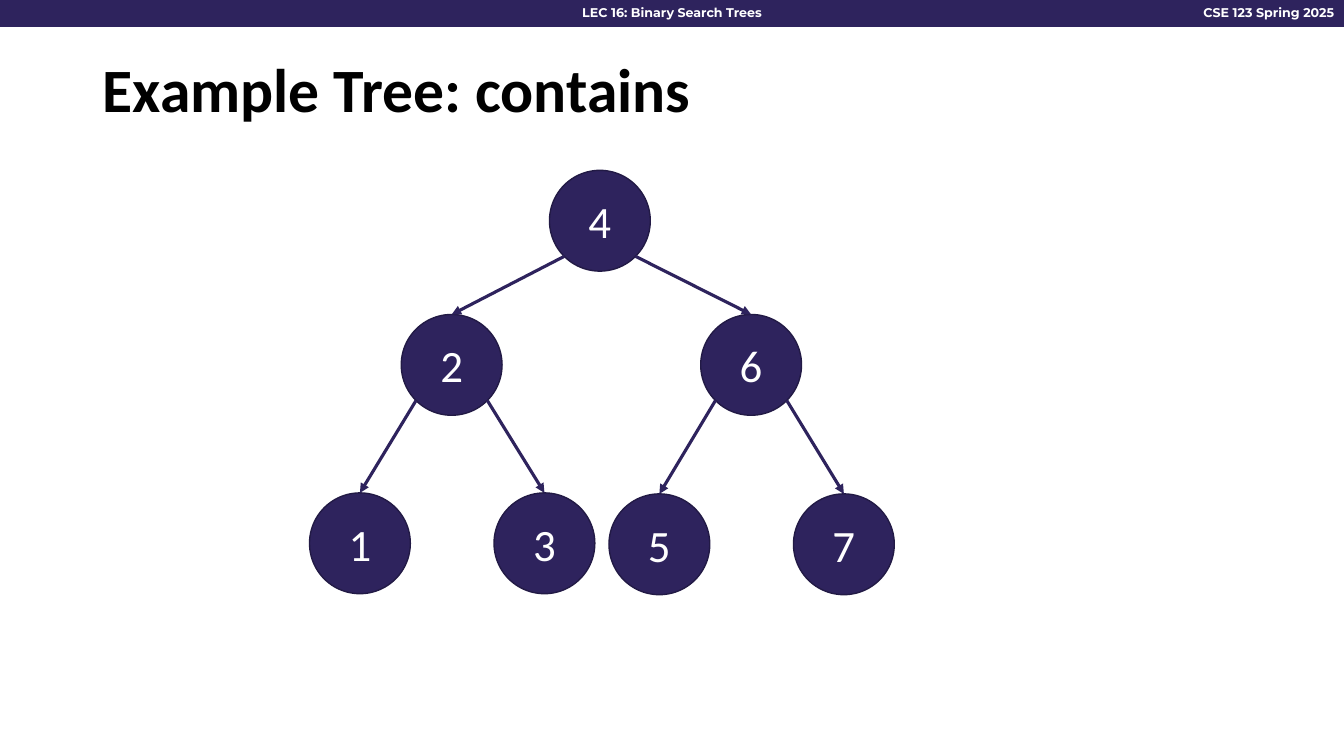
"""Build a lecture slide showing a binary search tree."""
import math
from dataclasses import dataclass

import pptx
import pptx.dml.color
import pptx.enum.shapes
import pptx.enum.text
import pptx.oxml
import pptx.oxml.ns
import pptx.util

Inches = pptx.util.Inches
Pt = pptx.util.Pt
ALIGN = pptx.enum.text.PP_ALIGN
ANCHOR = pptx.enum.text.MSO_ANCHOR
SHAPE = pptx.enum.shapes.MSO_SHAPE

PURPLE = "2E235D"
DARK_PURPLE = "221A45"
WHITE = "FFFFFF"
BLACK = "000000"
NODE_SIZE = 1.0
DIAGONAL = NODE_SIZE / 2 * math.sqrt(0.5)


@dataclass(frozen=True)
class TreeNode:
    value: int
    left: float
    top: float
    parent: int | None = None


@dataclass(frozen=True)
class HeaderLabel:
    text: str
    left: float
    width: float
    alignment: ALIGN


TREE_NODES = [
    TreeNode(4, 5.45, 1.69),
    TreeNode(2, 3.98, 3.12, 4),
    TreeNode(6, 6.95, 3.12, 4),
    TreeNode(1, 3.07, 4.89, 2),
    TreeNode(3, 4.9, 4.89, 2),
    TreeNode(5, 6.04, 4.9, 6),
    TreeNode(7, 7.87, 4.9, 6),
]

HEADER_LABELS = [
    HeaderLabel("CSE 123 Spring 2025", 11.56, 1.77, ALIGN.RIGHT),
    HeaderLabel("LEC 16: Binary Search Trees", 3.28, 6.77, ALIGN.CENTER),
]


def rgb(hex_colour: str) -> pptx.dml.color.RGBColor:
    return pptx.dml.color.RGBColor.from_string(hex_colour)


def write_text(shape, text: str, font_name: str, size: float, colour: str,
               alignment: ALIGN, bold: bool = False):
    paragraph = shape.text_frame.paragraphs[0]
    paragraph.text = text
    paragraph.alignment = alignment
    paragraph.font.name = font_name
    paragraph.font.size = Pt(size)
    paragraph.font.bold = bold
    paragraph.font.color.rgb = rgb(colour)
    return paragraph


def add_filled_shape(slide, kind: SHAPE, left: float, top: float, width: float,
                     height: float, line_colour: str):
    shape = slide.shapes.add_shape(
        kind, Inches(left), Inches(top), Inches(width), Inches(height))
    shape.shadow.inherit = False
    shape.fill.solid()
    shape.fill.fore_color.rgb = rgb(PURPLE)
    shape.line.color.rgb = rgb(line_colour)
    shape.line.width = Pt(1)
    return shape


def add_header_label(slide, label: HeaderLabel) -> None:
    box = slide.shapes.add_textbox(
        Inches(label.left), 0, Inches(label.width), Inches(0.25))
    box.text_frame.word_wrap = True
    write_text(box, label.text, "Montserrat", 9, WHITE, label.alignment, bold=True)


def format_title(title) -> None:
    title.left, title.top = Inches(0.92), Inches(0.5)
    title.width, title.height = Inches(11.5), Inches(0.83)
    title.text_frame.vertical_anchor = ANCHOR.MIDDLE
    paragraph = write_text(title, "Example Tree: contains", "Calibri", 44, BLACK,
                           ALIGN.LEFT, bold=True)
    paragraph.line_spacing = 0.9


def add_node(slide, node: TreeNode):
    circle = add_filled_shape(slide, SHAPE.OVAL, node.left, node.top,
                              NODE_SIZE, NODE_SIZE, DARK_PURPLE)
    circle.text_frame.vertical_anchor = ANCHOR.MIDDLE
    write_text(circle, str(node.value), "Calibri", 32, WHITE, ALIGN.CENTER)
    return circle


def add_branch(slide, parent: TreeNode, child: TreeNode, child_circle) -> None:
    radius = NODE_SIZE / 2
    side = -1 if child.left < parent.left else 1
    connector = slide.shapes.add_connector(
        pptx.enum.shapes.MSO_CONNECTOR.STRAIGHT,
        Inches(parent.left + radius + side * DIAGONAL),
        Inches(parent.top + radius + DIAGONAL),
        Inches(child.left + radius), Inches(child.top))
    connector.end_connect(child_circle, 0)
    connector.line.color.rgb = rgb(PURPLE)
    connector.line.width = Pt(2.25)
    namespace = pptx.oxml.ns.nsdecls("a")
    properties = connector.element.spPr
    properties.find(pptx.oxml.ns.qn("a:ln")).append(
        pptx.oxml.parse_xml(f'<a:tailEnd {namespace} type="triangle"/>'))
    properties.append(pptx.oxml.parse_xml(f"<a:effectLst {namespace}/>"))


def main() -> None:
    presentation = pptx.Presentation()
    presentation.slide_width = Inches(13.33)
    presentation.slide_height = Inches(7.5)
    slide = presentation.slides.add_slide(presentation.slide_layouts[5])
    slide.background.fill.solid()
    slide.background.fill.fore_color.rgb = rgb(WHITE)

    add_filled_shape(slide, SHAPE.RECTANGLE, -0.1, 0, 13.67, 0.26, PURPLE)
    for label in HEADER_LABELS:
        add_header_label(slide, label)
    format_title(slide.shapes.title)

    circles = {node.value: add_node(slide, node) for node in TREE_NODES}
    nodes = {node.value: node for node in TREE_NODES}
    for node in TREE_NODES:
        if node.parent is not None:
            add_branch(slide, nodes[node.parent], node, circles[node.value])

    presentation.save("out.pptx")


if __name__ == "__main__":
    main()
